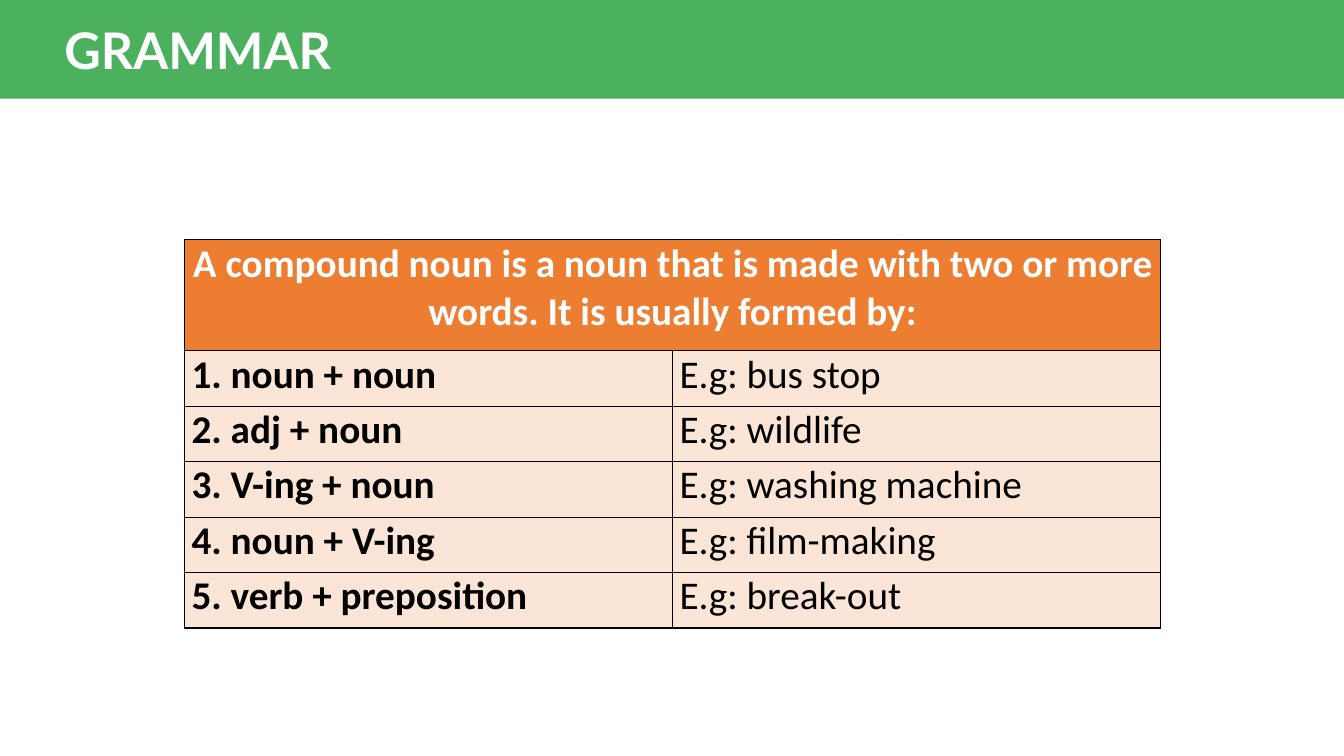
from dataclasses import dataclass

import pptx
import pptx.dml.color
import pptx.enum.shapes
import pptx.enum.text
import pptx.oxml
import pptx.oxml.ns
import pptx.util

Inches = pptx.util.Inches
Pt = pptx.util.Pt
RGB = pptx.dml.color.RGBColor.from_string


@dataclass(frozen=True)
class Theme:
    banner: str = "4CB15F"
    header: str = "ED7D31"
    body: str = "FBE5D6"
    light: str = "FFFFFF"
    dark: str = "000000"
    title_font: str = "Lato"
    table_font: str = "Calibri"
    title_size: int = 36
    table_size: int = 28
    border: int = 1


theme = Theme()
HEADING = "A compound noun is a noun that is made with two or more words. It is usually formed by:"
RULES = [
    ("1. noun + noun", "E.g: bus stop"),
    ("2. adj + noun", "E.g: wildlife"),
    ("3. V-ing + noun", "E.g: washing machine"),
    ("4. noun + V-ing", "E.g: film-making"),
    ("5. verb + preposition", "E.g: break-out"),
]


def set_font(p, name, size, color, bold):
    p.font.name = name
    p.font.size = Pt(size)
    p.font.color.rgb = RGB(color)
    p.font.bold = bold


def style_cell(cell, fill, color, bold):
    """Set borders, then fill, margins and type; the schema wants borders before fill."""
    tc_pr = cell._tc.get_or_add_tcPr()
    for side in "LRTB":
        tc_pr.append(pptx.oxml.parse_xml(
            f'<a:ln{side} {pptx.oxml.ns.nsdecls("a")} w="{Pt(theme.border)}"><a:solidFill>'
            f'<a:srgbClr val="{theme.dark}"/></a:solidFill></a:ln{side}>'))
    cell.fill.solid()
    cell.fill.fore_color.rgb = RGB(fill)
    cell.margin_left = cell.margin_right = Inches(0.07)
    cell.margin_top = cell.margin_bottom = 0
    p = cell.text_frame.paragraphs[0]
    p.space_before = p.space_after = Pt(2)
    set_font(p, theme.table_font, theme.table_size, color, bold)


prs = pptx.Presentation()
prs.slide_width, prs.slide_height = Inches(13.33), Inches(7.5)
s = prs.slides.add_slide(prs.slide_layouts[6])

# Title banner
banner = s.shapes.add_shape(pptx.enum.shapes.MSO_SHAPE.RECTANGLE, 0, 0, prs.slide_width, Inches(0.98))
banner.shadow.inherit = False
banner.fill.solid()
banner.fill.fore_color.rgb = RGB(theme.banner)
banner.line.fill.background()

title = s.shapes.add_textbox(Inches(0.54), Inches(0.14), Inches(5), Inches(0.71))
tf = title.text_frame
tf.word_wrap = True
tf.auto_size = pptx.enum.text.MSO_AUTO_SIZE.SHAPE_TO_FIT_TEXT
tf.text = "GRAMMAR"
set_font(tf.paragraphs[0], theme.title_font, theme.title_size, theme.light, True)

# Compound noun table: a merged heading above the rules
row_height = Inches(0.55)
table = s.shapes.add_table(len(RULES) + 1, 2, Inches(1.83), Inches(2.38),
                           Inches(9.68), row_height * (len(RULES) + 2)).table
for row in table.rows:
    row.height = row_height
table.rows[0].height = row_height * 2

heading = table.cell(0, 0)
heading.merge(table.cell(0, 1))
heading.text = HEADING
for col in range(2):
    style_cell(table.cell(0, col), theme.header, theme.light, True)
heading.text_frame.paragraphs[0].alignment = pptx.enum.text.PP_ALIGN.CENTER

for row, rule in enumerate(RULES, start=1):
    for col, text in enumerate(rule):
        cell = table.cell(row, col)
        cell.text = text
        style_cell(cell, theme.body, theme.dark, col == 0)

prs.save("out.pptx")
